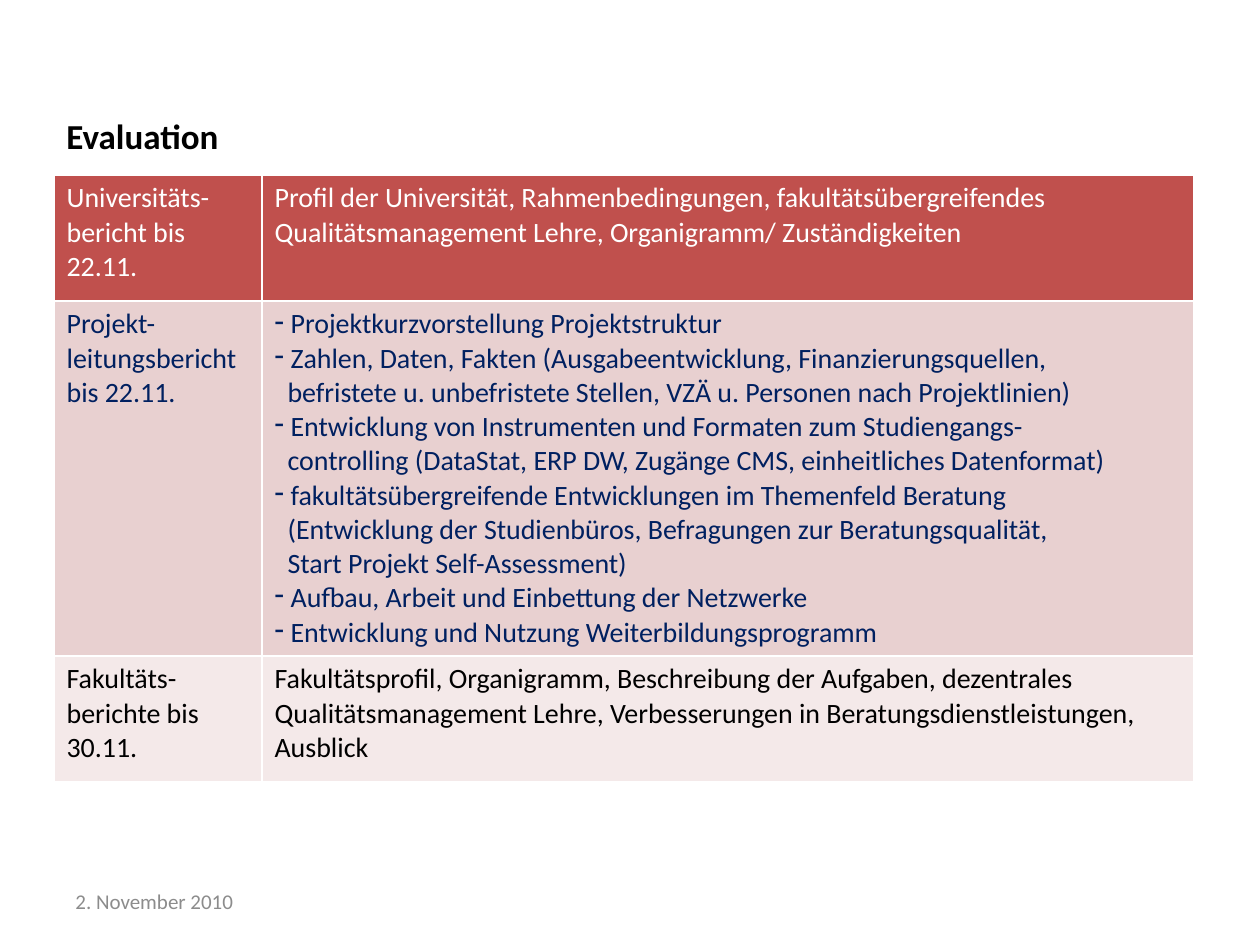
from lxml.etree import SubElement
from pptx import Presentation
from pptx.dml.color import RGBColor
from pptx.enum.text import MSO_ANCHOR
from pptx.oxml.ns import qn
from pptx.util import Pt

SCALE = 914400 / 126  # EMU per px


def px(length):
    return round(length * SCALE)


def write(paragraph, text, color, **font_format):
    run = paragraph.add_run()
    run.text = text
    run.font.color.rgb = RGBColor.from_string(color)
    for name, value in {"name": "Calibri", "bold": False, **font_format}.items():
        setattr(run.font, name, value)


presentation = Presentation()
presentation.slide_width = px(1260)
presentation.slide_height = px(945)
slide = presentation.slides.add_slide(presentation.slide_layouts[6])

# Title and date
for text, box, color, font_format in [
    ("Evaluation", (54, 106, 1071, 59), "000000", {"size": Pt(20), "bold": True}),
    ("2. November 2010", (63, 876, 294, 50), "8C8C8C", {"size": Pt(12)}),
]:
    frame = slide.shapes.add_textbox(*map(px, box)).text_frame
    frame.word_wrap = True
    frame.vertical_anchor = MSO_ANCHOR.MIDDLE
    write(frame.paragraphs[0], text, color, **font_format)

# Report contents; a line starting with "-" is a bullet
project_lines = [
    "-Projektkurzvorstellung Projektstruktur",
    "-Zahlen, Daten, Fakten (Ausgabeentwicklung, Finanzierungsquellen,",
    "befristete u. unbefristete Stellen, VZÄ u. Personen nach Projektlinien)",
    "-Entwicklung von Instrumenten und Formaten zum Studiengangs-",
    "controlling (DataStat, ERP DW, Zugänge CMS, einheitliches Datenformat)",
    "-fakultätsübergreifende Entwicklungen im Themenfeld Beratung",
    "(Entwicklung der Studienbüros, Befragungen zur Beratungsqualität,",
    "Start Projekt Self-Assessment)",
    "-Aufbau, Arbeit und Einbettung der Netzwerke",
    "-Entwicklung und Nutzung Weiterbildungsprogramm",
]
reports = [
    (126, "C0504D", "FFFFFF", "Universitäts-bericht bis 22.11.", [
        "Profil der Universität, Rahmenbedingungen, fakultätsübergreifendes "
        "Qualitätsmanagement Lehre, Organigramm/ Zuständigkeiten"]),
    (355, "E8D0D0", "002060", "Projekt-leitungsbericht bis 22.11.", project_lines),
    (126, "F4E9E9", "000000", "Fakultäts-berichte bis 30.11.", [
        "Fakultätsprofil, Organigramm, Beschreibung der Aufgaben, dezentrales "
        "Qualitätsmanagement Lehre, Verbesserungen in Beratungsdienstleistungen, "
        "Ausblick"]),
]

# Table grid
table = slide.shapes.add_table(3, 2, px(54), px(175), px(1140), px(607)).table
for name in ("first_row", "horz_banding"):
    setattr(table, name, False)
for column, width in zip(table.columns, (208, 932)):
    column.width = px(width)

# Table cells
for row_index, (height, fill, color, report, contents) in enumerate(reports):
    table.rows[row_index].height = px(height)
    for column_index, lines in enumerate(([report], contents)):
        cell = table.cell(row_index, column_index)

        # White borders come before the fill in the cell properties
        properties = cell._tc.get_or_add_tcPr()
        for side in ("lnL", "lnR", "lnT", "lnB"):
            border = SubElement(properties, qn(f"a:{side}"), w=str(Pt(1)))
            SubElement(SubElement(border, qn("a:solidFill")), qn("a:srgbClr"), val="FFFFFF")
        cell.fill.solid()
        cell.fill.fore_color.rgb = RGBColor.from_string(fill)

        for line_index, line in enumerate(lines):
            frame = cell.text_frame
            paragraph = frame.add_paragraph() if line_index else frame.paragraphs[0]
            if len(lines) > 1:
                paragraph_properties = paragraph._p.get_or_add_pPr()
                if line.startswith("-"):
                    paragraph_properties.set("marL", str(px(16)))
                    paragraph_properties.set("indent", str(px(-16)))
                    SubElement(paragraph_properties, qn("a:buChar"), char="-")
                else:
                    paragraph_properties.set("marL", str(px(13)))
                    paragraph_properties.set("indent", "0")
            write(paragraph, line.removeprefix("-"), color, size=Pt(16))

presentation.save("out.pptx")
